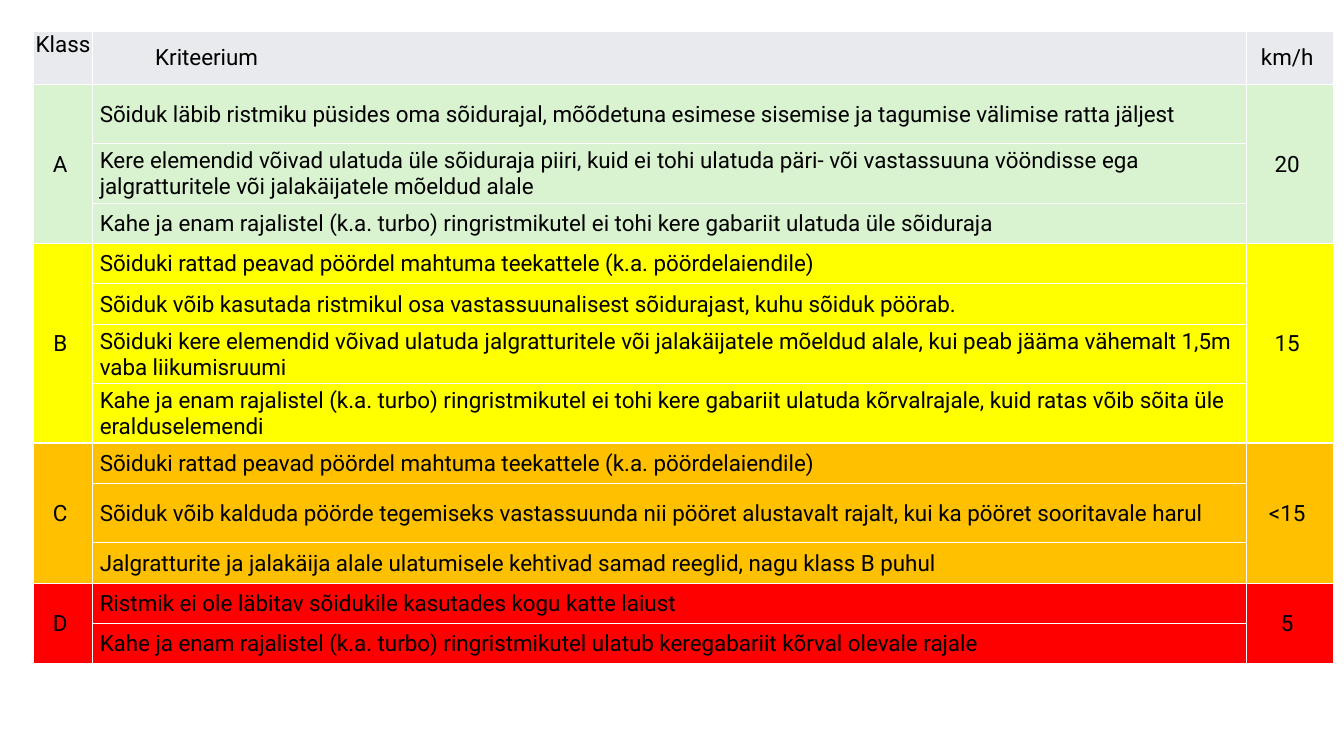
from lxml import etree
from pptx import Presentation
from pptx.dml.color import RGBColor
from pptx.enum import text
from pptx.oxml import ns
from pptx.util import Inches, Pt

BLACK = RGBColor(0x00, 0x00, 0x00)
WHITE = RGBColor(0xFF, 0xFF, 0xFF)
GREY = RGBColor(0xE8, 0xEA, 0xED)
GREEN = RGBColor(0xD9, 0xF2, 0xD0)
YELLOW = RGBColor(0xFF, 0xFF, 0x00)
ORANGE = RGBColor(0xFF, 0xC0, 0x00)
RED = RGBColor(0xFF, 0x00, 0x00)

NBSP = chr(160)
SHORT, TALL = 0.4, 0.59
COLUMN_WIDTHS = (0.59, 11.44, 0.87)
HEADINGS = ("Klass", "Kriteerium", "km/h")

CLASSES = [
    ("A", "20", GREEN, [
        (TALL, "Sõiduk läbib ristmiku püsides oma sõidurajal, mõõdetuna esimese "
               "sisemise ja tagumise välimise ratta jäljest"),
        (TALL, "Kere elemendid võivad ulatuda üle sõiduraja piiri, kuid ei tohi ulatuda "
               "päri- või vastassuuna vööndisse ega jalgratturitele või jalakäijatele "
               "mõeldud alale"),
        (SHORT, "Kahe ja enam rajalistel (k.a. turbo) ringristmikutel ei tohi kere "
                "gabariit ulatuda üle sõiduraja"),
    ]),
    ("B", "15", YELLOW, [
        (SHORT, "Sõiduki rattad peavad pöördel mahtuma teekattele (k.a. pöördelaiendile)"),
        (SHORT, "Sõiduk võib kasutada ristmikul osa vastassuunalisest sõidurajast, kuhu "
                "sõiduk pöörab."),
        (TALL, "Sõiduki kere elemendid võivad ulatuda jalgratturitele või jalakäijatele "
               "mõeldud alale, kui peab jääma vähemalt 1,5m vaba liikumisruumi"),
        (TALL, "Kahe ja enam rajalistel (k.a. turbo) ringristmikutel ei tohi kere gabariit "
               "ulatuda kõrvalrajale, kuid ratas võib sõita üle eralduselemendi"),
    ]),
    ("C", "<15", ORANGE, [
        (SHORT, "Sõiduki rattad peavad pöördel mahtuma teekattele (k.a. pöördelaiendile)"),
        (TALL, "Sõiduk võib kalduda pöörde tegemiseks vastassuunda nii pööret alustavalt "
               "rajalt, kui ka pööret sooritavale harul"),
        (SHORT, "Jalgratturite ja jalakäija alale ulatumisele kehtivad samad reeglid, nagu "
                "klass B puhul"),
    ]),
    ("D", "5", RED, [
        (SHORT, "Ristmik ei ole läbitav sõidukile kasutades kogu katte laiust"),
        (SHORT, "Kahe ja enam rajalistel (k.a. turbo) ringristmikutel ulatub keregabariit "
                "kõrval olevale rajale"),
    ]),
]


def add_borders(cell):
    """Draw a thin white line on every side of the cell."""
    properties = cell._tc.get_or_add_tcPr()
    for position, side in enumerate(("lnL", "lnR", "lnT", "lnB")):
        line = etree.Element(ns.qn(f"a:{side}"), w=str(Pt(1)))
        fill = etree.SubElement(line, ns.qn("a:solidFill"))
        etree.SubElement(fill, ns.qn("a:srgbClr"), val=str(WHITE))
        properties.insert(position, line)


def style_cell(cell, colour):
    """Give the cell its fill, borders and narrow margins."""
    cell.fill.solid()
    cell.fill.fore_color.rgb = colour
    add_borders(cell)
    cell.vertical_anchor = text.MSO_ANCHOR.MIDDLE
    cell.margin_left = cell.margin_right = cell.margin_top = Inches(0.01)
    cell.margin_bottom = 0


def write_cell(cell, words, indent=None):
    """Write words centred, or from the left when an indent is given."""
    paragraph = cell.text_frame.paragraphs[0]
    paragraph.text = words + NBSP
    paragraph.font.name = "Roboto"
    paragraph.font.size = Pt(16)
    paragraph.font.color.rgb = BLACK
    if indent is None:
        paragraph.alignment = text.PP_ALIGN.CENTER
    else:
        paragraph.alignment = text.PP_ALIGN.LEFT
        cell.margin_left = Inches(indent)


def fill_header(table):
    """Fill the heading row."""
    for column, (heading, indent) in enumerate(zip(HEADINGS, (None, 0.62, None))):
        style_cell(table.cell(0, column), GREY)
        write_cell(table.cell(0, column), heading, indent)


def fill_class(table, first, grade, speed, colour, criteria):
    """Fill the rows of one class and return the row after them."""
    for row, (height, criterion) in enumerate(criteria, first):
        table.rows[row].height = Inches(height)
        for cell in table.rows[row].cells:
            style_cell(cell, colour)
        write_cell(table.cell(row, 1), criterion, 0.07)
    after = first + len(criteria)
    for column, label in ((0, grade), (2, speed)):
        table.cell(first, column).merge(table.cell(after - 1, column))
        write_cell(table.cell(first, column), label)
    return after


def add_criteria_table(slide, left, top, width):
    """Place the table of intersection classes."""
    heights = [SHORT] + [height for *_, criteria in CLASSES for height, _ in criteria]
    table = slide.shapes.add_table(
        len(heights), len(COLUMN_WIDTHS), left, top, width, Inches(sum(heights))).table
    table.horz_banding = False
    for column, share in zip(table.columns, COLUMN_WIDTHS):
        column.width = int(width * share / sum(COLUMN_WIDTHS))
    table.rows[0].height = Inches(SHORT)
    table.first_row = False
    fill_header(table)
    row = 1
    for grade, speed, colour, criteria in CLASSES:
        row = fill_class(table, row, grade, speed, colour, criteria)


def main():
    """Build and save the slide."""
    deck = Presentation()
    deck.slide_width, deck.slide_height = Inches(13.33), Inches(7.5)
    slide = deck.slides.add_slide(deck.slide_layouts[6])
    add_criteria_table(slide, Inches(0.33), Inches(0.31), Inches(12.9))
    deck.save("out.pptx")


if __name__ == "__main__":
    main()
